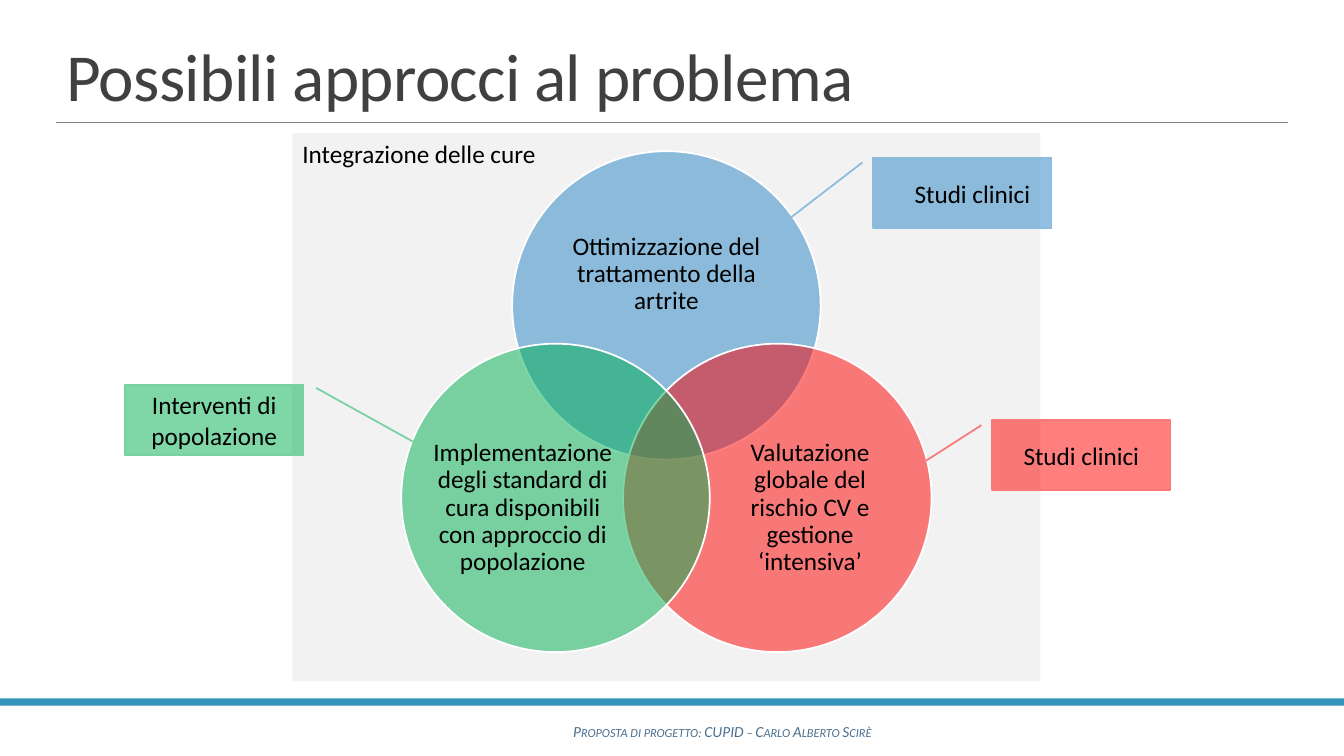
import pptx
import pptx.util
import pptx.dml.color
import pptx.enum.shapes
import pptx.enum.text
import pptx.oxml
import pptx.oxml.ns

Inches = pptx.util.Inches
Pt = pptx.util.Pt
MSO_SHAPE = pptx.enum.shapes.MSO_SHAPE
ANCHOR = pptx.enum.text.MSO_ANCHOR
ALIGN = pptx.enum.text.PP_ALIGN

COLORS = {
    "bar": "3494BA", "rule": "808080", "footer": "4A7090", "panel": "F2F2F2",
    "title": "404040", "text": "000000", "white": "FFFFFF",
    "blue": "2683C6", "red": "FF0000", "green": "00B050",
    "blue_line": "8CBBDC", "red_line": "F97979", "green_line": "79D1A1",
}


def rgb(name):
    return pptx.dml.color.RGBColor.from_string(COLORS[name])


def write(sp, text, size=18, color="text", align=ALIGN.CENTER,
          anchor=ANCHOR.MIDDLE, inset=(0, 0), spacing=None):
    tf = sp.text_frame
    tf.word_wrap = True
    tf.vertical_anchor = anchor
    tf.margin_left = tf.margin_right = Inches(inset[0])
    tf.margin_top = tf.margin_bottom = Inches(inset[1])
    p = tf.paragraphs[0]
    p.text = text
    p.alignment = align
    if spacing:
        p.line_spacing = spacing
    r = p.runs[0]
    r.font.name = "Calibri"
    r.font.size = Pt(size)
    r.font.color.rgb = rgb(color)
    return p


def add_text(s, box, text, **style):
    sp = s.shapes.add_textbox(*map(Inches, box))
    return write(sp, text, **style)


def add_block(s, kind, box, fill, line=None, alpha=None):
    sp = s.shapes.add_shape(kind, *map(Inches, box))
    sp.shadow.inherit = False
    sp.fill.solid()
    sp.fill.fore_color.rgb = rgb(fill)
    if alpha:
        clr = sp.fill._xPr.find(".//" + pptx.oxml.ns.qn("a:srgbClr"))
        node = pptx.oxml.parse_xml(
            f'<a:alpha {pptx.oxml.ns.nsdecls("a")} val="{alpha * 1000}"/>')
        clr.append(node)
    if line:
        sp.line.color.rgb = rgb(line)
        sp.line.width = Pt(1.25)
    else:
        sp.line.fill.background()
    return sp


def add_rule(s, x1, x2, y):
    cn = s.shapes.add_connector(pptx.enum.shapes.MSO_CONNECTOR.STRAIGHT,
                                Inches(x1), Inches(y), Inches(x2), Inches(y))
    cn.line.color.rgb = rgb("rule")
    cn.line.width = Pt(0.5)
    sp_pr = cn._element.spPr
    sp_pr.append(pptx.oxml.parse_xml(f'<a:effectLst {pptx.oxml.ns.nsdecls("a")}/>'))


def add_circle(s, left, top, color, label_box, label):
    add_block(s, MSO_SHAPE.OVAL, (left, top, 3.06, 3.06), color, "white", 50)
    add_text(s, label_box, label, spacing=0.9)


def add_callout(s, left, top, color, leader, label, indent=0):
    sp = add_block(s, MSO_SHAPE.LINE_CALLOUT_1, (left, top, 1.77, 0.69),
                   color, color + "_line", 50)
    for i, value in enumerate(leader):
        sp.adjustments[i] = value
    p = write(sp, label)
    if indent:
        p._p.get_or_add_pPr().set("marL", str(Inches(indent)))


def main():
    prs = pptx.Presentation()
    prs.slide_width = Inches(13.33)
    prs.slide_height = Inches(7.5)
    s = prs.slides.add_slide(prs.slide_layouts[6])

    add_block(s, MSO_SHAPE.RECTANGLE, (0, 6.93, 13.33, 0.07), "bar")
    add_rule(s, 0.56, 12.77, 1.21)
    p = add_text(s, (2.58, 7.11, 9.17, 0.29),
                 "Proposta di progetto: CUPID – Carlo Alberto Scirè",
                 size=11, color="footer", anchor=ANCHOR.TOP, inset=(0.1, 0.05))
    p.runs[0].font.italic = True
    p.runs[0].font._element.set("cap", "small")

    panel = add_block(s, MSO_SHAPE.RECTANGLE, (2.9, 1.32, 7.42, 5.44), "panel")
    write(panel, "Integrazione delle cure", align=ALIGN.LEFT,
          anchor=ANCHOR.TOP, inset=(0.1, 0.05))
    p = add_text(s, (0.56, 0.31, 12.21, 0.88), "Possibili approcci al problema",
                 size=48, color="title", align=ALIGN.LEFT,
                 anchor=ANCHOR.BOTTOM, inset=(0.1, 0.05), spacing=0.85)
    p.runs[0].font._element.set("spc", "-50")

    add_circle(s, 5.08, 1.5, "blue", (5.49, 2.03, 2.24, 1.38),
               "Ottimizzazione del trattamento della artrite")
    add_circle(s, 6.18, 3.41, "red", (7.12, 4.2, 1.83, 1.68),
               "Valutazione globale del rischio CV e gestione ‘intensiva’")
    add_circle(s, 3.98, 3.41, "green", (4.27, 4.2, 1.83, 1.68),
               "Implementazione degli standard di cura disponibili "
               "con approccio di popolazione")

    add_callout(s, 8.66, 1.57, "blue", (0.06, -0.06, 0.85, -0.46),
                "Studi clinici", indent=0.2)
    add_callout(s, 9.84, 4.17, "red", (0.07, -0.06, 0.58, -0.37),
                "Studi clinici")
    add_callout(s, 1.24, 3.82, "green", (0.04, 1.07, 0.85, 1.64),
                "Interventi di popolazione")

    prs.save("out.pptx")


if __name__ == "__main__":
    main()
